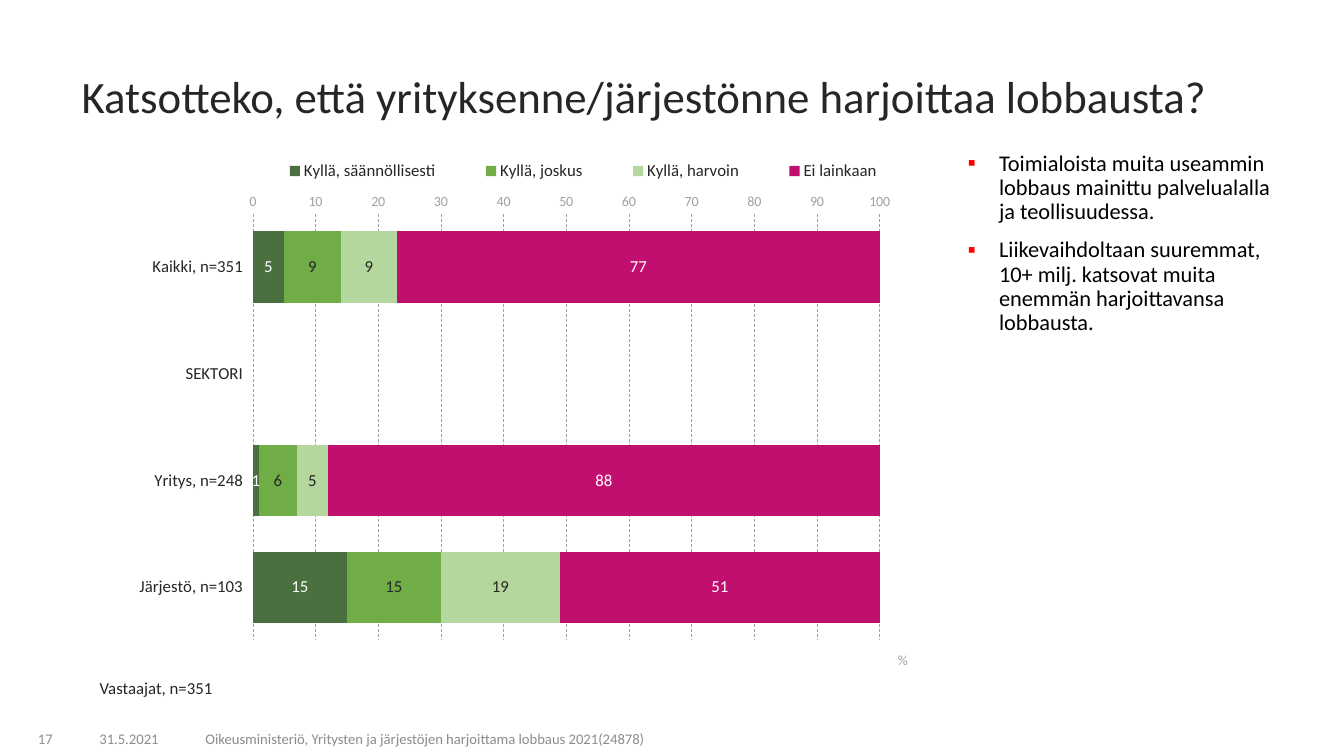
"""Build a survey slide with a stacked bar chart of lobbying answers."""
import pptx
import pptx.chart.data
import pptx.dml.color
import pptx.enum.chart
import pptx.enum.dml
import pptx.enum.text
import pptx.oxml
import pptx.oxml.ns
import pptx.util

THEME = {
    "font": "Calibri", "title": 32, "body": 16, "label": 12, "footer": 10.5, "axis": 10,
    "dark": "262626", "black": "000000", "white": "FFFFFF", "grey": "8C8C8C",
    "pale": "A0A0A0", "bullet": "FF0000",
}
RGB = pptx.dml.color.RGBColor.from_string
ALIGN = pptx.enum.text.PP_ALIGN
ANCHOR = pptx.enum.text.MSO_ANCHOR
XL = pptx.enum.chart

prs = pptx.Presentation()
prs.slide_width = pptx.util.Inches(13.33)
prs.slide_height = pptx.util.Inches(7.5)
slide = prs.slides.add_slide(prs.slide_layouts[6])


def share(left, top, width, height):
    """Turn percentages of the slide's size into lengths."""
    w, h = prs.slide_width / 100, prs.slide_height / 100
    return [int(n) for n in (left * w, top * h, width * w, height * h)]


def add_text(text, box, size="label", color="dark", align=ALIGN.LEFT,
             anchor=ANCHOR.TOP, spacing=0.9, bullet=None):
    """Add a text box with one paragraph per line of text."""
    tf = slide.shapes.add_textbox(*share(*box)).text_frame
    tf.word_wrap = True
    tf.vertical_anchor = anchor
    for i, line in enumerate(text.split("\n")):
        p = tf.paragraphs[0] if i == 0 else tf.add_paragraph()
        if bullet:
            pPr = p._p.get_or_add_pPr()
            indent = pptx.util.Inches(0.31)
            pPr.set("marL", str(indent))
            pPr.set("indent", str(-indent))
            ns = pptx.oxml.ns.nsdecls("a")
            for xml in (f'<a:buClr {ns}><a:srgbClr val="{THEME["bullet"]}"/></a:buClr>',
                        f'<a:buFont {ns} typeface="{THEME["font"]}"/>',
                        f'<a:buChar {ns} char="{bullet}"/>'):
                pPr.append(pptx.oxml.parse_xml(xml))
        if i:
            p.space_before = pptx.util.Pt(10)
        p.alignment = align
        p.line_spacing = spacing
        r = p.add_run()
        r.text = line
        r.font.name = THEME["font"]
        r.font.size = pptx.util.Pt(THEME[size])
        r.font.color.rgb = RGB(THEME[color])


add_text("Katsotteko, että yrityksenne/järjestönne harjoittaa lobbausta?",
         (5.33, 8.53, 90.55, 9.07), size="title", anchor=ANCHOR.MIDDLE)
add_text("Toimialoista muita useammin lobbaus mainittu palvelualalla ja teollisuudessa.\n"
         "Liikevaihdoltaan suuremmat, 10+ milj. katsovat muita enemmän harjoittavansa lobbausta.",
         (71.27, 19.47, 24.61, 74.27), size="body", color="black", bullet="▪")

data = pptx.chart.data.CategoryChartData(number_format="0")
data.categories = ["Kaikki, n=351", "SEKTORI", "Yritys, n=248", "Järjestö, n=103"]
answers = [
    ("Kyllä, säännöllisesti", (5, None, 1, 15), "4A7040", "white"),
    ("Kyllä, joskus", (9, None, 6, 15), "70AD47", "dark"),
    ("Kyllä, harvoin", (9, None, 5, 19), "B3D79D", "dark"),
    ("Ei lainkaan", (77, None, 88, 51), "C10F70", "white"),
]
for name, values, fill, ink in answers:
    data.add_series(name, values)
chart = slide.shapes.add_chart(XL.XL_CHART_TYPE.BAR_STACKED,
                               *share(5.33, 19.47, 64.52, 69.87), data).chart
chart.has_title = False
chart.font.name = THEME["font"]
chart.font.size = pptx.util.Pt(THEME["label"])
chart.font.color.rgb = RGB(THEME["black"])

plot = chart.plots[0]
plot.gap_width = 50
plot.overlap = 100
plot.vary_by_categories = False
for series, (name, values, fill, ink) in zip(plot.series, answers):
    series.format.fill.solid()
    series.format.fill.fore_color.rgb = RGB(fill)
    labels = series.data_labels
    labels.show_value = True
    labels.number_format = "#,##0"
    labels.number_format_is_linked = False
    labels.position = XL.XL_LABEL_POSITION.CENTER
    labels.font.size = pptx.util.Pt(THEME["label"])
    labels.font.color.rgb = RGB(THEME[ink])

cat_axis, val_axis = chart.category_axis, chart.value_axis
for axis, size, color in ((cat_axis, "label", "dark"), (val_axis, "axis", "pale")):
    axis.major_tick_mark = axis.minor_tick_mark = XL.XL_TICK_MARK.NONE
    axis.format.line.fill.background()
    axis.tick_labels.font.name = THEME["font"]
    axis.tick_labels.font.size = pptx.util.Pt(THEME[size])
    axis.tick_labels.font.color.rgb = RGB(THEME[color])
cat_axis.reverse_order = True
cat_axis.crosses = XL.XL_AXIS_CROSSES.MAXIMUM
cat_axis.tick_label_position = XL.XL_TICK_LABEL_POSITION.LOW

val_axis.minimum_scale, val_axis.maximum_scale, val_axis.major_unit = 0, 100.01, 10
val_axis.tick_labels.number_format = "General"
val_axis.tick_labels.number_format_is_linked = False
val_axis.has_major_gridlines = True
grid = val_axis.major_gridlines.format.line
grid.color.rgb = RGB(THEME["pale"])
grid.width = pptx.util.Pt(0.5)
grid.dash_style = pptx.enum.dml.MSO_LINE.DASH
p = val_axis.axis_title.text_frame.paragraphs[0]
r = p.add_run()
r.text = "%"
r.font.name = THEME["font"]
r.font.size = pptx.util.Pt(THEME["axis"])
r.font.bold = False
r.font.color.rgb = RGB(THEME["pale"])

chart.has_legend = True
chart.legend.position = XL.XL_LEGEND_POSITION.TOP
chart.legend.include_in_layout = False
chart.legend.font.name = THEME["font"]
chart.legend.font.size = pptx.util.Pt(THEME["label"])
chart.legend.font.color.rgb = RGB(THEME["dark"])

layouts = [
    (chart._chartSpace.chart.plotArea, 0, {"x": 0.209, "y": 0.126, "w": 0.723, "h": 0.808}),
    (chart.legend._element, 1, {"x": 0.2, "y": 0.02, "w": 0.78, "h": 0.05}),
    (val_axis.axis_title._element, 1, {"x": 0.95, "y": 0.95}),
]
for element, index, place in layouts:
    for old in element.findall(pptx.oxml.ns.qn("c:layout")):
        element.remove(old)
    target = '<c:layoutTarget val="inner"/>' if index == 0 else ""
    modes = "".join(f'<c:{k}Mode val="edge"/>' for k in "xy")
    sizes = "".join(f'<c:{k} val="{v}"/>' for k, v in place.items())
    element.insert(index, pptx.oxml.parse_xml(
        f'<c:layout {pptx.oxml.ns.nsdecls("c")}><c:manualLayout>'
        f'{target}{modes}{sizes}</c:manualLayout></c:layout>'))

add_text("Vastaajat, n=351", (6.68, 89.33, 68.87, 3.73))
footers = [
    ("17", 0.23, 4.43, ALIGN.RIGHT),
    ("31.5.2021", 4.95, 9.3, ALIGN.CENTER),
    ("Oikeusministeriö, Yritysten ja järjestöjen harjoittama lobbaus 2021(24878)",
     14.55, 44.41, ALIGN.LEFT),
]
for text, left, width, align in footers:
    add_text(text, (left, 95.47, width, 4), size="footer", color="grey",
             align=align, anchor=ANCHOR.BOTTOM, spacing=1.0)

prs.save("out.pptx")
